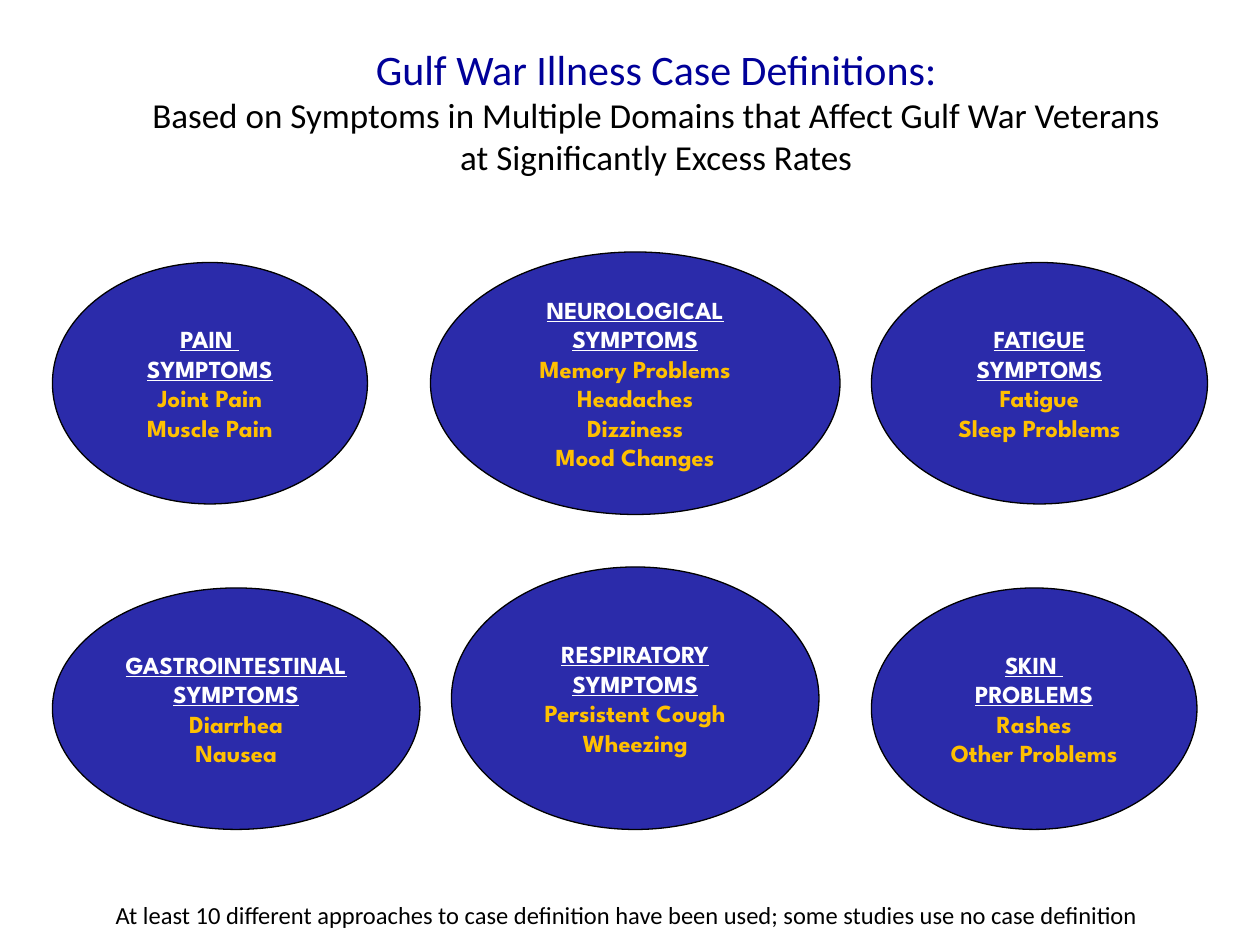
from pptx import Presentation
from pptx.dml.color import RGBColor
from pptx.enum.shapes import MSO_SHAPE as Shape
from pptx.enum.text import MSO_ANCHOR as Anchor, PP_ALIGN as Align
from pptx.oxml.ns import qn
from pptx.util import Pt
from lxml import etree


def color(code):
    return RGBColor.from_string(code)


def write(frame, lines, align):
    """Fill a text frame with one paragraph per (text, format) pair."""
    for i, (text, form) in enumerate(lines):
        para = frame.paragraphs[0] if i == 0 else frame.add_paragraph()
        para.alignment = align
        run = para.add_run()
        run.text = text
        for key, value in form.items():
            if key == "color":
                run.font.color.rgb = color(value)
            else:
                setattr(run.font, key, value)


deck = Presentation()
deck.slide_width, deck.slide_height = Pt(720), Pt(540)
slide = deck.slides.add_slide(deck.slide_layouts[5])

# Text formats
main = dict(name="Calibri", size=Pt(24), color="000099")
sub = dict(name="Calibri", size=Pt(20), color="000000")
note = dict(name="Calibri", size=Pt(14), color="000000")
head = dict(name="League Spartan", size=Pt(14), bold=True,
            underline=True, color="FFFFFF")
item = dict(head, underline=False, color="FFC000")

# Title
title = slide.shapes.title
title.left, title.top, title.width, title.height = Pt(30), Pt(0), Pt(690), Pt(126)
title.text_frame.vertical_anchor = Anchor.MIDDLE
write(title.text_frame, [
    ("Gulf War Illness Case Definitions:", main),
    ("Based on Symptoms in Multiple Domains that Affect Gulf War Veterans", sub),
    ("at Significantly Excess Rates", sub),
], Align.CENTER)

# Symptom domains: left, top, width, height, two heading lines, items
domains = [
    (246, 144, 234, 150, ["NEUROLOGICAL", "SYMPTOMS"],
     ["Memory Problems", "Headaches", "Dizziness", "Mood Changes"]),
    (258, 324, 210, 150, ["RESPIRATORY", "SYMPTOMS"],
     ["Persistent Cough", "Wheezing"]),
    (30, 336, 210, 138, ["GASTROINTESTINAL", "SYMPTOMS"],
     ["Diarrhea", "Nausea"]),
    (498, 336, 186, 138, ["SKIN ", "PROBLEMS"],
     ["Rashes", "Other Problems"]),
    (30, 150, 180, 138, ["PAIN ", "SYMPTOMS"],
     ["Joint Pain", "Muscle Pain"]),
    (498, 150, 192, 138, ["FATIGUE", "SYMPTOMS"],
     ["Fatigue", "Sleep Problems"]),
]
for *box, heads, items in domains:
    oval = slide.shapes.add_shape(Shape.OVAL, *map(Pt, box))
    oval.shadow.inherit = False
    oval.fill.solid()
    oval.fill.fore_color.rgb = color("000099")
    # 83 % opaque fill
    tint = oval.fill._xPr.find(qn("a:solidFill"))[0]
    etree.SubElement(tint, qn("a:alpha")).set("val", "83000")
    oval.line.color.rgb = color("000000")
    oval.line.width = Pt(0.75)
    frame = oval.text_frame
    frame.word_wrap = False
    frame.vertical_anchor = Anchor.MIDDLE
    lines = [(text, head) for text in heads] + [(text, item) for text in items]
    write(frame, lines, Align.CENTER)

# Closing note
foot = slide.shapes.add_textbox(Pt(59), Pt(510.5), Pt(625), Pt(24.5))
foot.text_frame.word_wrap = True
write(foot.text_frame, [
    ("At least 10 different approaches to case definition have been used; "
     "some studies use no case definition", note),
], Align.LEFT)

deck.save("out.pptx")
